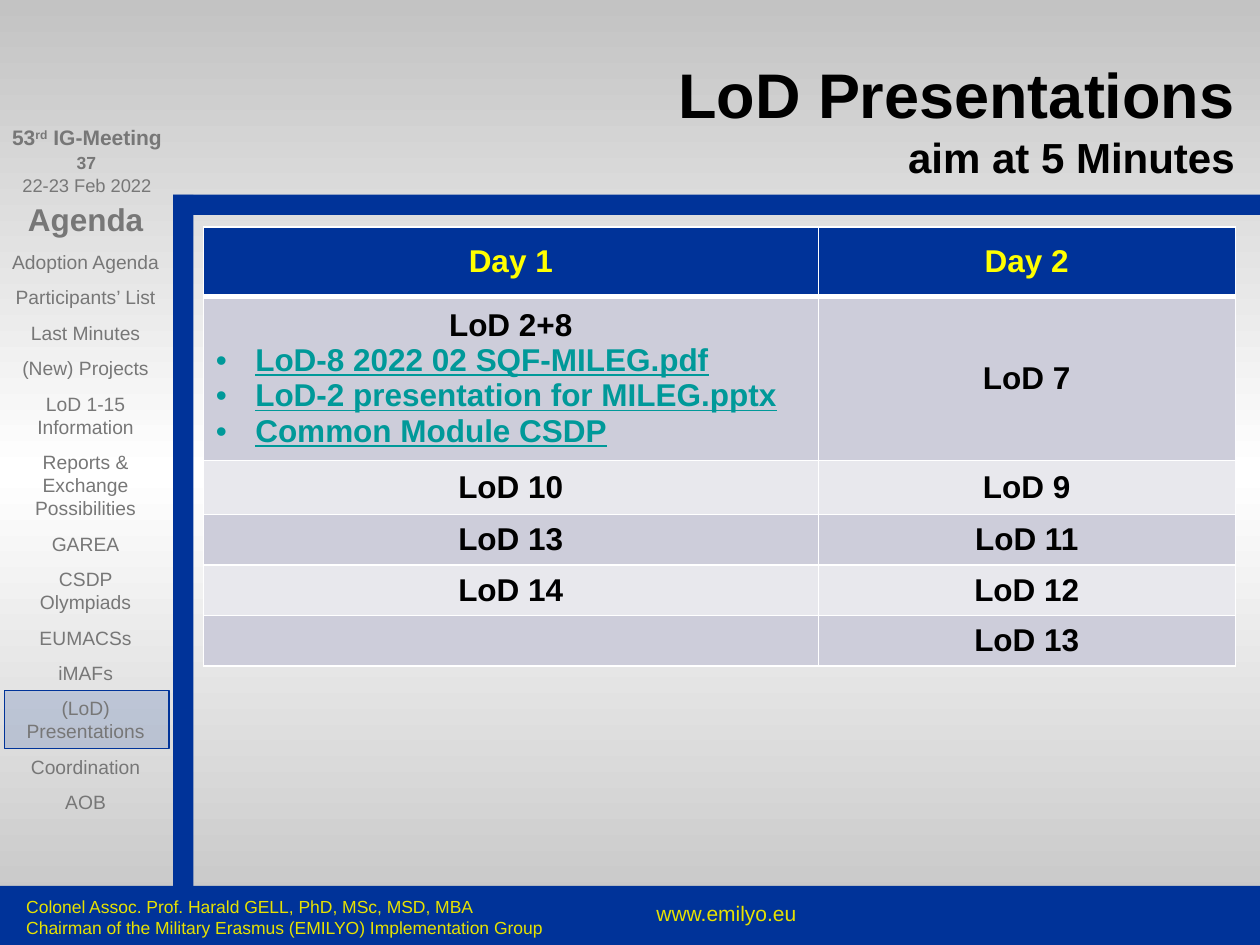
from copy import deepcopy
from dataclasses import dataclass

from lxml import etree
from pptx import Presentation
from pptx.dml.color import RGBColor
from pptx.enum.shapes import MSO_SHAPE
from pptx.enum.text import MSO_ANCHOR, MSO_AUTO_SIZE, PP_ALIGN
from pptx.oxml.ns import qn
from pptx.util import Pt

LEFT, CENTER, RIGHT = PP_ALIGN.LEFT, PP_ALIGN.CENTER, PP_ALIGN.RIGHT
RECTANGLE = MSO_SHAPE.RECTANGLE
MIDDLE, BOTTOM = MSO_ANCHOR.MIDDLE, MSO_ANCHOR.BOTTOM


@dataclass(frozen=True)
class Theme:
    font: str = "Arial"
    blue: str = "003399"
    grey: str = "777777"
    silver: str = "C3C3C3"
    white: str = "FFFFFF"
    black: str = "000000"
    footer: str = "E7E200"
    header: str = "FFFF00"
    link: str = "009999"
    bands: tuple = ("CDCDDA", "E8E8ED")
    title: int = 36
    subtitle: int = 24
    heading: int = 18
    meeting: int = 12
    date: float = 10.5
    agenda: int = 11
    small: int = 10


theme = Theme()


def style(para, size, color, bold=False, align=CENTER):
    para.alignment = align
    para.font.name = theme.font
    para.font.size = Pt(size)
    para.font.bold = bold
    para.font.color.rgb = RGBColor.from_string(color)


def add_box(left, top, width, height, margin=None):
    """Add a wrapping text box and return its text frame."""
    frame = page.shapes.add_textbox(Pt(left), Pt(top), Pt(width), Pt(height)).text_frame
    frame.word_wrap = True
    if margin is not None:
        frame.margin_left = frame.margin_right = Pt(margin)
        frame.margin_top = frame.margin_bottom = Pt(margin)
    return frame


deck = Presentation()
deck.slide_width, deck.slide_height = Pt(720), Pt(540)
page = deck.slides.add_slide(deck.slide_layouts[5])

# Background: silver, white in the middle, silver
fill = page.background.fill
fill.gradient()
fill.gradient_angle = 270
for stop, color in zip(fill.gradient_stops, (theme.silver, theme.white)):
    stop.color.rgb = RGBColor.from_string(color)
stop_list = page.element.find(".//" + qn("a:gsLst"))
stop_list.append(deepcopy(stop_list[0]))
for stop, position in zip(stop_list, (0, 50000, 100000)):
    stop.set("pos", str(position))

# Blue frame bars and the marker on the current agenda item
bars = [
    (99, 111.3, 11.5, 403.9),
    (99, 111.3, 621, 11.5),
    (0, 506.2, 720, 33.8),
    (2.6, 394.6, 93.9, 33),
]
for left, top, width, height in bars:
    bar = page.shapes.add_shape(RECTANGLE, Pt(left), Pt(top), Pt(width), Pt(height))
    bar.shadow.inherit = False
    bar.fill.solid()
    bar.fill.fore_color.rgb = RGBColor.from_string(theme.blue)
    bar.line.fill.background()
marker = bar
marker.line.color.rgb = RGBColor.from_string(theme.blue)
marker.line.width = Pt(0.75)
marker_color = marker.element.spPr.find(qn("a:solidFill"))[0]
etree.SubElement(marker_color, qn("a:alpha"), val="16000")

# Title
title = page.shapes.title
title.left, title.top, title.width, title.height = Pt(99.4), Pt(13.7), Pt(606.2), Pt(90)
frame = title.text_frame
frame.auto_size = MSO_AUTO_SIZE.NONE
frame.word_wrap = True
frame.vertical_anchor = BOTTOM
frame.margin_left = frame.margin_right = frame.margin_top = frame.margin_bottom = 0
para = frame.paragraphs[0]
style(para, theme.title, theme.black, True, RIGHT)
para.add_run().text = "LoD Presentations"
para.add_line_break()
span = para.add_run()
span.text = "aim at 5 Minutes"
span.font.size = Pt(theme.subtitle)

# Meeting name, date and page number
meeting = add_box(0, 71.3, 99.4, 47.5, 0)
para = meeting.paragraphs[0]
style(para, theme.meeting, theme.grey, True)
for text in ("53", "rd", " IG-Meeting"):
    span = para.add_run()
    span.text = text
    if text == "rd":
        span.font._element.set("baseline", "30000")
para = meeting.add_paragraph()
para.text = "22-23 Feb 2022"
para.space_before = Pt(13.8)
style(para, theme.date, theme.grey)

number = add_box(31.7, 83.5, 35.3, 19.4)
number.text = "37"
style(number.paragraphs[0], theme.small, theme.grey, True)

# Agenda
agenda_items = [
    "Agenda", "Adoption Agenda", "Participants’ List", "Last Minutes",
    "(New) Projects", "LoD 1-15 Information", "Reports & Exchange Possibilities",
    "GAREA", "CSDP Olympiads", "EUMACSs", "iMAFs", "(LoD) Presentations",
    "Coordination", "AOB",
]
agenda = add_box(3.6, 111.6, 90.7, 391, 2.9)
agenda.text = "\n".join(agenda_items)
for index, para in enumerate(agenda.paragraphs):
    para.space_after = Pt(7)
    style(para, theme.agenda if index else theme.heading, theme.grey, index == 0)

# Footer
website = add_box(351, 511.2, 128.2, 25.2)
website.text = "www.emilyo.eu"
style(website.paragraphs[0], theme.meeting, theme.footer)
author = add_box(7.9, 508.3, 315.4, 25.2)
author.text = (
    "Colonel Assoc. Prof. Harald GELL, PhD, MSc, MSD, MBA\n"
    "Chairman of the Military Erasmus (EMILYO) Implementation Group"
)
for para in author.paragraphs:
    style(para, theme.small, theme.footer, align=LEFT)

# Table of presentations; lines after the first in a cell are bulleted links
schedule = [
    ("Day 1", "Day 2"),
    ("LoD 2+8\nLoD-8 2022 02 SQF-MILEG.pdf\nLoD-2 presentation for MILEG.pptx\n"
     "Common Module CSDP", "LoD 7"),
    ("LoD 10", "LoD 9"),
    ("LoD 13", "LoD 11"),
    ("LoD 14", "LoD 12"),
    ("", "LoD 13"),
]
row_heights = (39.6, 87.6, 31, 28, 27.5, 27.5)
table = page.shapes.add_table(
    len(schedule), 2, Pt(116.2), Pt(129.8), Pt(589.7), Pt(sum(row_heights))
).table
for column, width in zip(table.columns, (351.4, 238.3)):
    column.width = Pt(width)
for row_index, (row, height) in enumerate(zip(schedule, row_heights)):
    table.rows[row_index].height = Pt(height)
    is_header = row_index == 0
    row_fill = theme.blue if is_header else theme.bands[(row_index - 1) % 2]
    for column_index, text in enumerate(row):
        cell = table.cell(row_index, column_index)
        cell.vertical_anchor = MIDDLE
        cell.text = text
        properties = cell._tc.get_or_add_tcPr()
        for side in ("L", "R", "T", "B"):
            thick = (side, row_index) in (("B", 0), ("T", 1))
            border = etree.SubElement(
                properties, qn("a:ln" + side), w=str(Pt(3 if thick else 1)))
            paint = etree.SubElement(border, qn("a:solidFill"))
            etree.SubElement(paint, qn("a:srgbClr"), val=theme.white)
        cell.fill.solid()
        cell.fill.fore_color.rgb = RGBColor.from_string(row_fill)
        for line, para in enumerate(cell.text_frame.paragraphs):
            if line:
                layout = para._p.get_or_add_pPr()
                layout.set("marL", str(Pt(22.5)))
                layout.set("indent", str(-Pt(22.5)))
                etree.SubElement(layout, qn("a:buFont"), typeface=theme.font)
                etree.SubElement(layout, qn("a:buChar"), char="•")
                style(para, theme.heading, theme.link, True, LEFT)
                para.font.underline = True
            else:
                color = theme.header if is_header else theme.black
                style(para, theme.heading, color, True)

deck.save("out.pptx")
